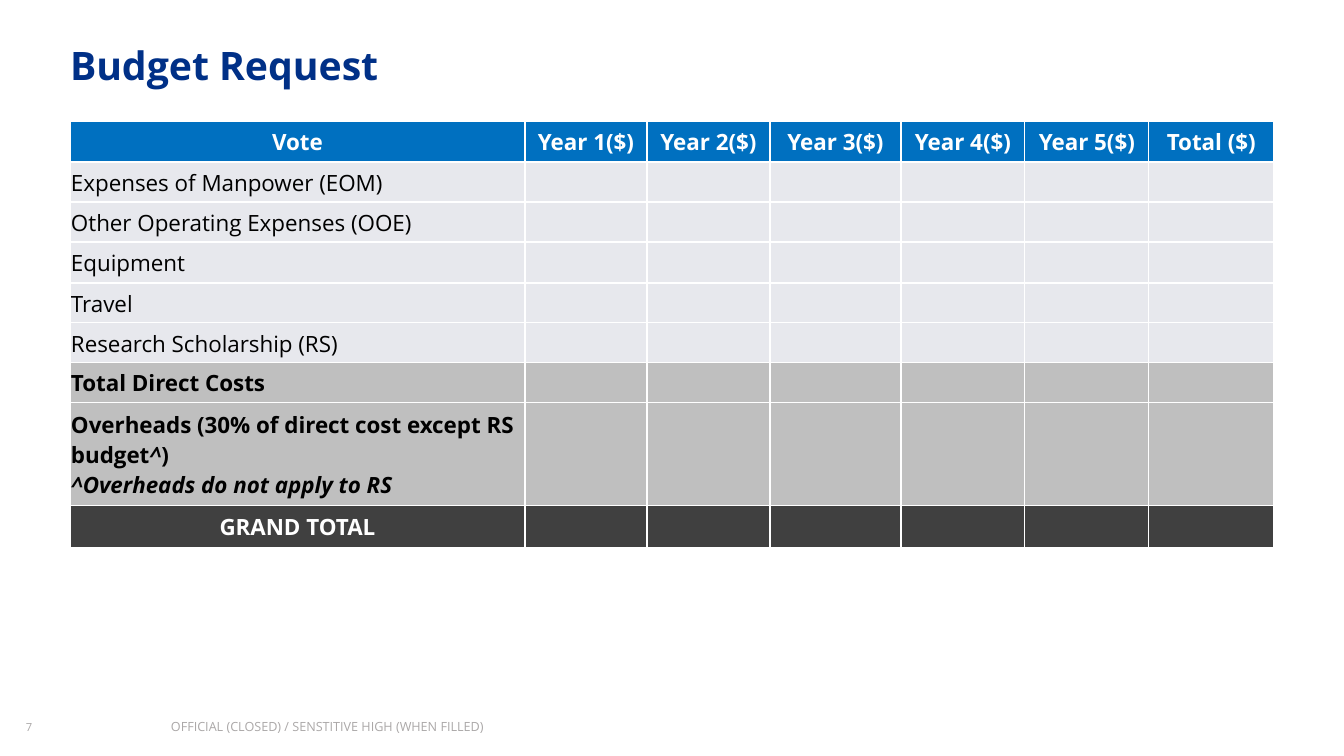
from lxml import etree
from pptx import Presentation
from pptx import util as u
from pptx.dml.color import RGBColor
from pptx.enum import text
from pptx.oxml.ns import qn

PX = 914400 / 100.8
FONT = "Open Sans"
WHITE, BLACK, NAVY, GREY = "FFFFFF", "000000", "003087", "ABA8A8"
BLUE, PALE, SILVER, CHARCOAL = "0070C0", "E7E8ED", "BFBFBF", "404040"
LEFT, CENTER = text.PP_ALIGN.LEFT, text.PP_ALIGN.CENTER

HEADINGS = ["Vote", *(f"Year {year}($)" for year in range(1, 6)), "Total ($)"]
EXPENSES = ["Expenses of Manpower (EOM)", "Other Operating Expenses (OOE)",
            "Equipment", "Travel", "Research Scholarship (RS)"]
# Each paragraph is a list of (text, italic) runs.
OVERHEADS = [
    [("Overheads (30% of direct cost except RS budget", False), ("^", True), (")", False)],
    [("^Overheads do not apply to RS", True)],
]
COLUMNS = [455, 122, 123, 131, 124, 124, 125]
ROWS = [41, 40, 40, 41, 40, 40, 40, 103, 42]


def px(n):
    return u.Emu(round(n * PX))


def rgb(value):
    return RGBColor.from_string(value)


def plain(label):
    return [[(label, False)]]


def write(tf, paragraphs, size, color, bold=False, align=LEFT, spacing=None):
    for i, runs in enumerate(paragraphs):
        p = tf.add_paragraph() if i else tf.paragraphs[0]
        p.alignment = align
        p.line_spacing = spacing
        p.font.size = u.Pt(size)
        for label, italic in runs:
            r = p.add_run()
            r.text = label
            formats = {"name": FONT, "size": u.Pt(size), "bold": bold, "italic": italic}
            for name, value in formats.items():
                setattr(r.font, name, value)
            r.font.color.rgb = rgb(color)


def add_text(s, box, label, size, color, **formats):
    tf = s.shapes.add_textbox(*map(px, box)).text_frame
    tf.word_wrap = True
    for side in ("left", "top", "right", "bottom"):
        setattr(tf, f"margin_{side}", 0)
    write(tf, plain(label), size, color, **formats)


def add_borders(cell, color):
    tc_pr = cell._tc.get_or_add_tcPr()
    for side in ("lnL", "lnR", "lnT", "lnB"):
        ln = etree.SubElement(tc_pr, qn(f"a:{side}"), w=str(u.Pt(1)))
        fill = etree.SubElement(ln, qn("a:solidFill"))
        etree.SubElement(fill, qn("a:srgbClr"), val=color)


def add_budget_table(s, left, top):
    rows = [([plain(h) for h in HEADINGS], BLUE, WHITE, True, CENTER)]
    rows += [([plain(e)], PALE, BLACK, False, LEFT) for e in EXPENSES]
    rows += [
        ([plain("Total Direct Costs")], SILVER, BLACK, True, LEFT),
        ([OVERHEADS], SILVER, BLACK, True, LEFT),
        ([plain("GRAND TOTAL")], CHARCOAL, WHITE, True, CENTER),
    ]
    box = map(px, (left, top, sum(COLUMNS), sum(ROWS)))
    table = s.shapes.add_table(len(ROWS), len(COLUMNS), *box).table
    table.first_row = table.horz_banding = False
    for column, width in zip(table.columns, COLUMNS):
        column.width = px(width)
    cell_format = {"margin_left": px(1), "margin_top": px(1), "margin_right": px(1),
                   "margin_bottom": 0, "vertical_anchor": text.MSO_ANCHOR.MIDDLE}
    for row, height, (contents, fill, color, bold, align) in zip(table.rows, ROWS, rows):
        row.height = px(height)
        contents += [plain("")] * (len(COLUMNS) - len(contents))
        for cell, content in zip(row.cells, contents):
            for name, value in cell_format.items():
                setattr(cell, name, value)
            add_borders(cell, WHITE)
            cell.fill.solid()
            cell.fill.fore_color.rgb = rgb(fill)
            write(cell.text_frame, content, 16, color, bold, align)


def add_footer(s, top, height):
    add_text(s, (26, top, 80, height), "7", 8, GREY, spacing=1.1)
    add_text(s, (171, top, 537, height),
             "OFFICIAL (CLOSED) / SENSTITIVE HIGH (WHEN FILLED)", 9, GREY)


def main():
    prs = Presentation()
    prs.slide_width, prs.slide_height = px(1344), px(756)
    s = prs.slides.add_slide(prs.slide_layouts[6])
    add_text(s, (70, 37, 1111, 52), "Budget Request", 28, NAVY, bold=True, spacing=1.1)
    add_budget_table(s, 70, 121)
    add_footer(s, 719, 19)
    prs.save("out.pptx")


if __name__ == "__main__":
    main()
